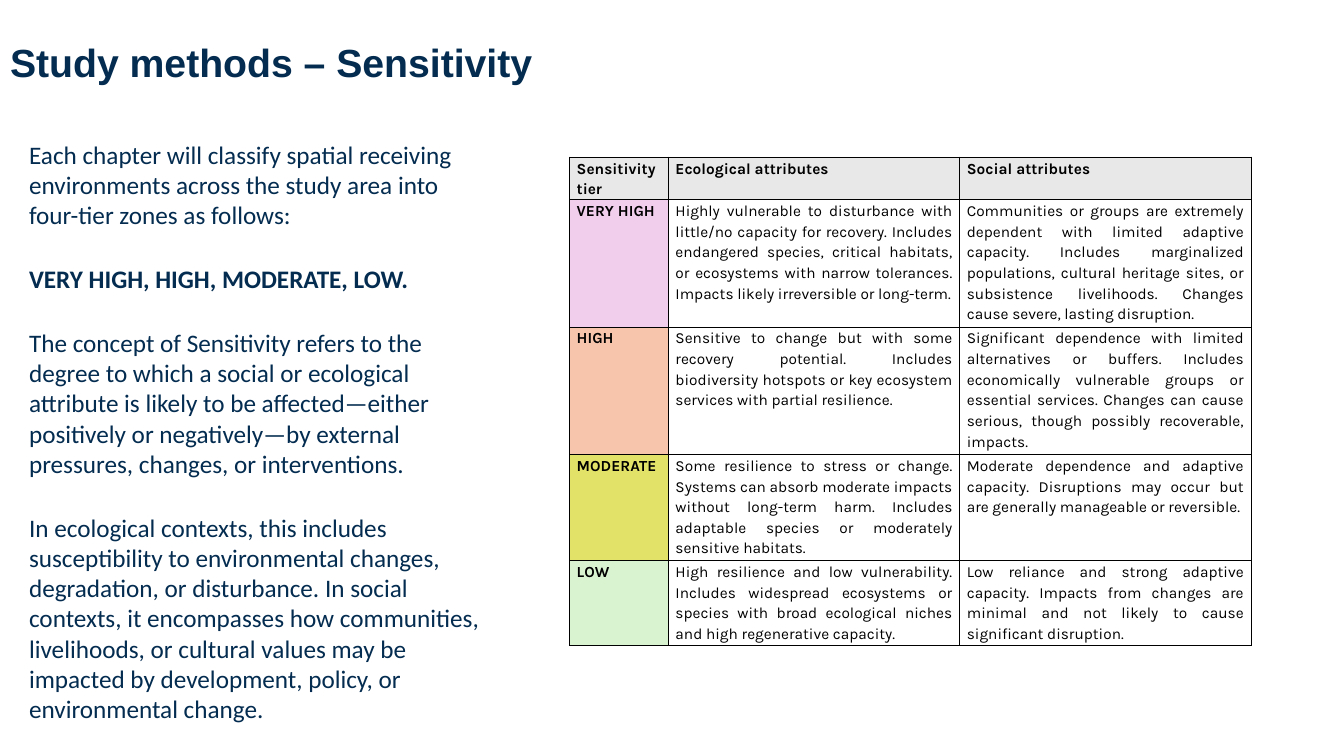
from lxml.etree import SubElement
from pptx import Presentation
from pptx.dml.color import RGBColor
from pptx.enum.text import MSO_ANCHOR, MSO_AUTO_SIZE, PP_ALIGN
from pptx.oxml.ns import qn
from pptx.util import Emu, Pt

PX = 9144  # 100 px to the inch
NAVY = RGBColor(0x03, 0x2C, 0x50)
BLACK = RGBColor(0x00, 0x00, 0x00)
HEADER_GREY = RGBColor(0xE8, 0xE8, 0xE8)
VERY_HIGH_PINK = RGBColor(0xF2, 0xCE, 0xED)
HIGH_ORANGE = RGBColor(0xF6, 0xC5, 0xAC)
MODERATE_YELLOW = RGBColor(0xE2, 0xE2, 0x68)
LOW_GREEN = RGBColor(0xD9, 0xF2, 0xD0)

BODY = [
    ("Each chapter will classify spatial receiving environments across the study area "
     "into four-tier zones as follows:", False),
    ("VERY HIGH, HIGH, MODERATE, LOW.", True),
    ("The concept of Sensitivity refers to the degree to which a social or ecological "
     "attribute is likely to be affected—either positively or negatively—by external "
     "pressures, changes, or interventions.", False),
    ("In ecological contexts, this includes susceptibility to environmental changes, "
     "degradation, or disturbance. In social contexts, it encompasses how communities, "
     "livelihoods, or cultural values may be impacted by development, policy, or "
     "environmental change.", False),
]

# Row height, tier colour, texts
TIERS = [
    (41, HEADER_GREY, ("Sensitivity tier", "Ecological attributes", "Social attributes")),
    (124, VERY_HIGH_PINK, (
        "VERY HIGH",
        "Highly vulnerable to disturbance with little/no capacity for recovery. Includes "
        "endangered species, critical habitats, or ecosystems with narrow tolerances. "
        "Impacts likely irreversible or long-term.",
        "Communities or groups are extremely dependent with limited adaptive capacity. "
        "Includes marginalized populations, cultural heritage sites, or subsistence "
        "livelihoods. Changes cause severe, lasting disruption.")),
    (124, HIGH_ORANGE, (
        "HIGH",
        "Sensitive to change but with some recovery potential. Includes biodiversity "
        "hotspots or key ecosystem services with partial resilience.",
        "Significant dependence with limited alternatives or buffers. Includes economically "
        "vulnerable groups or essential services. Changes can cause serious, though possibly "
        "recoverable, impacts.")),
    (104, MODERATE_YELLOW, (
        "MODERATE",
        "Some resilience to stress or change. Systems can absorb moderate impacts without "
        "long-term harm. Includes adaptable species or moderately sensitive habitats.",
        "Moderate dependence and adaptive capacity. Disruptions may occur but are generally "
        "manageable or reversible.")),
    (83, LOW_GREEN, (
        "LOW",
        "High resilience and low vulnerability. Includes widespread ecosystems or species "
        "with broad ecological niches and high regenerative capacity.",
        "Low reliance and strong adaptive capacity. Impacts from changes are minimal and not "
        "likely to cause significant disruption.")),
]
COLUMN_WIDTHS = (98, 289, 289)


def add_run(paragraph, text, font_name, size, color, bold):
    run = paragraph.add_run()
    run.text = text
    run.font.name = font_name
    run.font.size = Pt(size)
    run.font.color.rgb = color
    run.font.bold = bold


def add_borders(cell):
    """Draw a 1 pt black line on all four sides of a table cell."""
    properties = cell._tc.get_or_add_tcPr()
    for side in ("a:lnL", "a:lnR", "a:lnT", "a:lnB"):
        line = SubElement(properties, qn(side), w=str(Pt(1)))
        fill = SubElement(line, qn("a:solidFill"))
        SubElement(fill, qn("a:srgbClr"), val=str(BLACK))


presentation = Presentation()
presentation.slide_width = Emu(1333 * PX)
presentation.slide_height = Emu(750 * PX)
slide = presentation.slides.add_slide(presentation.slide_layouts[5])

# Title
title = slide.shapes.title
title.left, title.top, title.width, title.height = (Emu(v * PX) for v in (0, 0, 801, 100))
title.text_frame.auto_size = MSO_AUTO_SIZE.NONE
title.text_frame.vertical_anchor = MSO_ANCHOR.MIDDLE
paragraph = title.text_frame.paragraphs[0]
paragraph.alignment = PP_ALIGN.LEFT
paragraph.line_spacing = 1.5
add_run(paragraph, "Study methods – Sensitivity", "Arial", 28, NAVY, True)

# Explanation on the left
explanation = slide.shapes.add_textbox(*(Emu(v * PX) for v in (19, 133, 480, 596)))
text_frame = explanation.text_frame
text_frame.word_wrap = True
text_frame.auto_size = MSO_AUTO_SIZE.SHAPE_TO_FIT_TEXT
for index, (text, bold) in enumerate(BODY):
    paragraph = text_frame.add_paragraph() if index else text_frame.paragraphs[0]
    paragraph.space_before = Pt(18 if index else 0)
    paragraph.space_after = Pt(6)
    add_run(paragraph, text, "Calibri", 18, NAVY, bold)

# Sensitivity table
table_size = (sum(COLUMN_WIDTHS), sum(height for height, _, _ in TIERS))
table = slide.shapes.add_table(
    len(TIERS), len(COLUMN_WIDTHS), *(Emu(v * PX) for v in (565, 156, *table_size))).table
table.horz_banding = False
for column, width in zip(table.columns, COLUMN_WIDTHS):
    column.width = Emu(width * PX)
for row_index, (height, color, texts) in enumerate(TIERS):
    table.rows[row_index].height = Emu(height * PX)
    for column_index, text in enumerate(texts):
        cell = table.cell(row_index, column_index)
        is_heading = row_index == 0 or column_index == 0
        cell.margin_left = cell.margin_right = Emu(7 * PX)
        cell.margin_top = cell.margin_bottom = 0
        add_borders(cell)
        if is_heading:
            cell.fill.solid()
            cell.fill.fore_color.rgb = color
        else:
            cell.fill.background()
        paragraph = cell.text_frame.paragraphs[0]
        paragraph.alignment = PP_ALIGN.JUSTIFY
        paragraph.line_spacing = 1.15
        paragraph.space_after = Pt(8)
        add_run(paragraph, text, "Karla", 11, BLACK, is_heading)

presentation.save("out.pptx")
